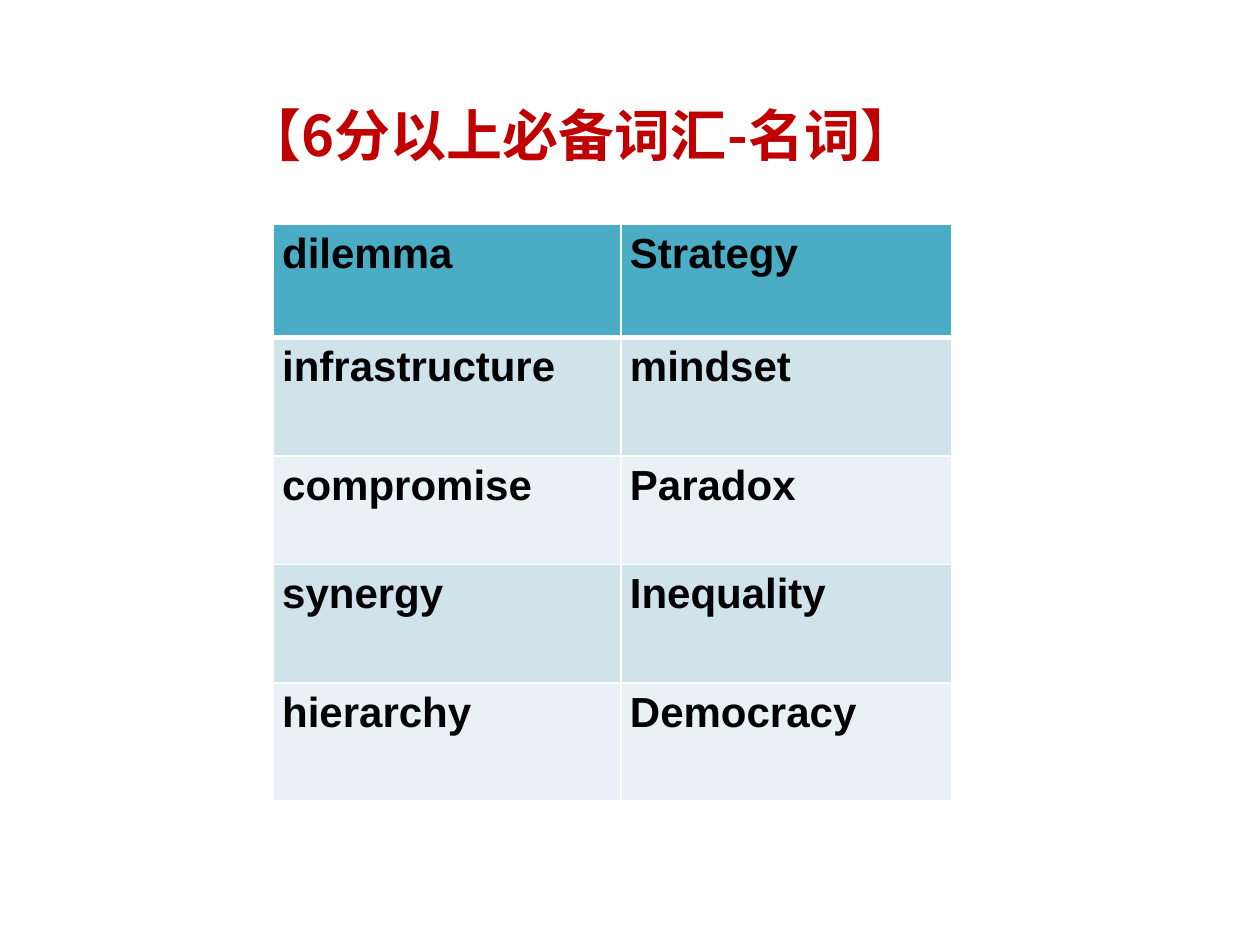
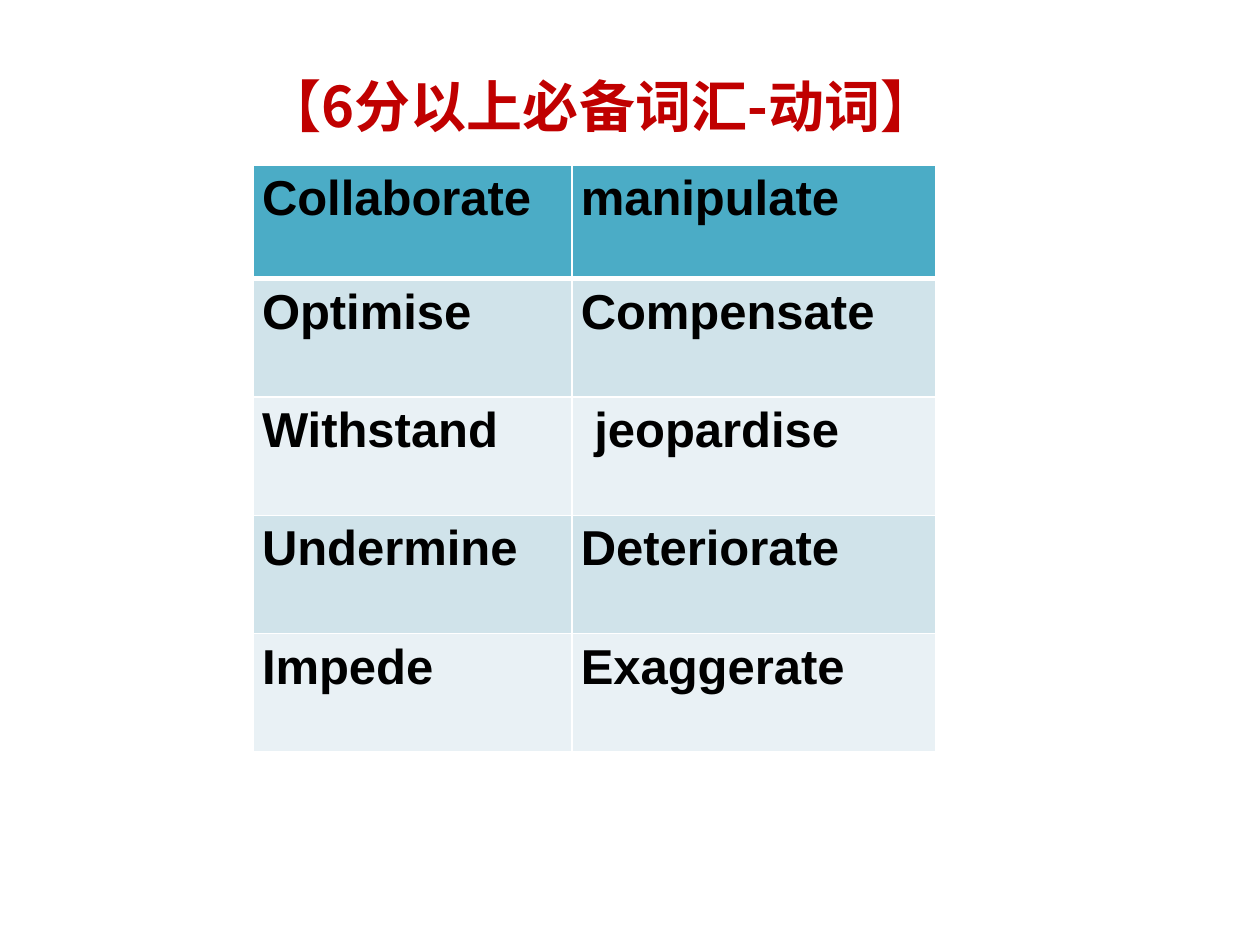
"""Build two vocabulary slides, each with a red title and a banded word table."""
import pptx
import pptx.dml.color
import pptx.enum.text
import pptx.oxml.ns
import pptx.util
from lxml import etree

PX = 9144
TITLE_RED = pptx.dml.color.RGBColor(0xC0, 0x00, 0x00)
BLACK = pptx.dml.color.RGBColor(0x00, 0x00, 0x00)
HEADER_TEAL = pptx.dml.color.RGBColor(0x4B, 0xAC, 0xC6)
BAND_DARK = pptx.dml.color.RGBColor(0xD0, 0xE3, 0xEA)
BAND_LIGHT = pptx.dml.color.RGBColor(0xE9, 0xF1, 0xF5)
BORDER_WHITE = pptx.dml.color.RGBColor(0xFF, 0xFF, 0xFF)
ROW_FILLS = [HEADER_TEAL, BAND_DARK, BAND_LIGHT, BAND_DARK, BAND_LIGHT]
TITLE_FONT = "Noto Sans CJK SC"
TABLE_FONT = "Arial"

SLIDES = [
    {
        "title": "【6分以上必备词汇-名词】",
        "title_box": (185, 75, 635, 64),
        "table_at": (217, 178),
        "cols": [276, 262],
        "rows": [90, 94, 86, 94, 94],
        "size": 24,
        "words": [
            ("dilemma", "Strategy"),
            ("infrastructure", "mindset"),
            ("compromise", "Paradox"),
            ("synergy", "Inequality"),
            ("hierarchy", "Democracy"),
        ],
    },
    {
        "title": "【6分以上必备词汇-动词】",
        "title_box": (201, 52, 596, 64),
        "table_at": (201, 131),
        "cols": [253, 289],
        "rows": [90, 94, 94, 94, 94],
        "size": 28,
        "words": [
            ("Collaborate", "manipulate"),
            ("Optimise", "Compensate"),
            ("Withstand", " jeopardise"),
            ("Undermine", "Deteriorate"),
            ("Impede", "Exaggerate"),
        ],
    },
]


def style_font(font, name, size, color):
    font.name = name
    font.size = pptx.util.Pt(size)
    font.bold = True
    font.color.rgb = color


def set_borders(cell, bottom_width):
    tcPr = cell._tc.get_or_add_tcPr()
    widths = {"a:lnL": 1, "a:lnR": 1, "a:lnT": 1, "a:lnB": bottom_width}
    for i, (tag, width) in enumerate(widths.items()):
        ln = etree.Element(pptx.oxml.ns.qn(tag), w=str(pptx.util.Pt(width)))
        fill = etree.SubElement(ln, pptx.oxml.ns.qn("a:solidFill"))
        etree.SubElement(fill, pptx.oxml.ns.qn("a:srgbClr"), val=str(BORDER_WHITE))
        tcPr.insert(i, ln)


prs = pptx.Presentation()
prs.slide_width = 1000 * PX
prs.slide_height = 750 * PX

for data in SLIDES:
    s = prs.slides.add_slide(prs.slide_layouts[5])

    title = s.shapes.title
    title.left, title.top, title.width, title.height = [v * PX for v in data["title_box"]]
    tf = title.text_frame
    tf.text = data["title"]
    tf.word_wrap = True
    tf.auto_size = pptx.enum.text.MSO_AUTO_SIZE.SHAPE_TO_FIT_TEXT
    tf.vertical_anchor = pptx.enum.text.MSO_ANCHOR.TOP
    p = tf.paragraphs[0]
    p.alignment = pptx.enum.text.PP_ALIGN.LEFT
    style_font(p.font, TITLE_FONT, 32, TITLE_RED)
    latin = p._p.pPr.find(".//" + pptx.oxml.ns.qn("a:latin"))
    latin.addnext(etree.Element(pptx.oxml.ns.qn("a:ea"), typeface=TITLE_FONT))

    left, top = data["table_at"]
    width, height = sum(data["cols"]), sum(data["rows"])
    table = s.shapes.add_table(
        len(data["rows"]), len(data["cols"]), left * PX, top * PX, width * PX, height * PX
    ).table
    table.first_row = False
    table.horz_banding = False
    for column, col_width in zip(table.columns, data["cols"]):
        column.width = col_width * PX
    for r, row_height in enumerate(data["rows"]):
        table.rows[r].height = row_height * PX
        for c, word in enumerate(data["words"][r]):
            cell = table.cell(r, c)
            cell.text = word
            cell.margin_left = cell.margin_right = 7 * PX
            cell.margin_top = cell.margin_bottom = 5 * PX
            cell.fill.solid()
            cell.fill.fore_color.rgb = ROW_FILLS[r]
            set_borders(cell, 3 if r == 0 else 1)
            style_font(cell.text_frame.paragraphs[0].font, TABLE_FONT, data["size"], BLACK)

prs.save("out.pptx")
